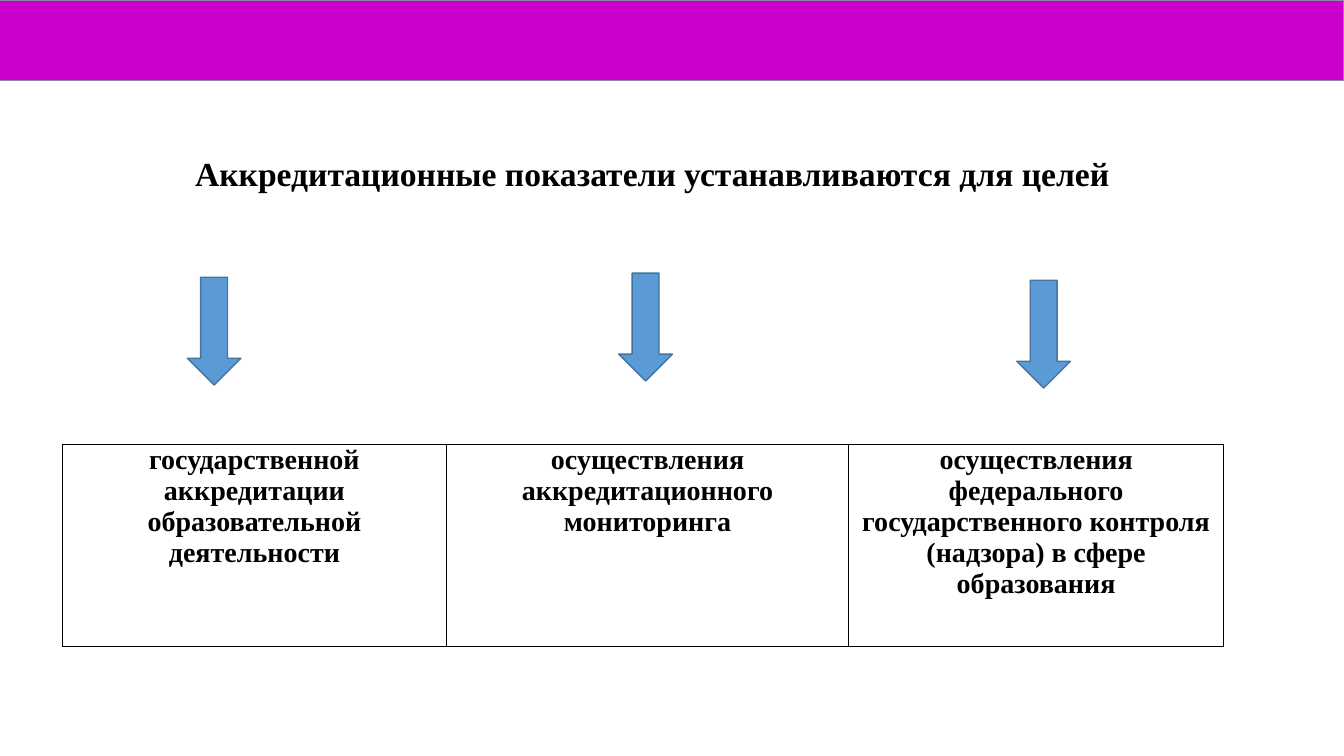
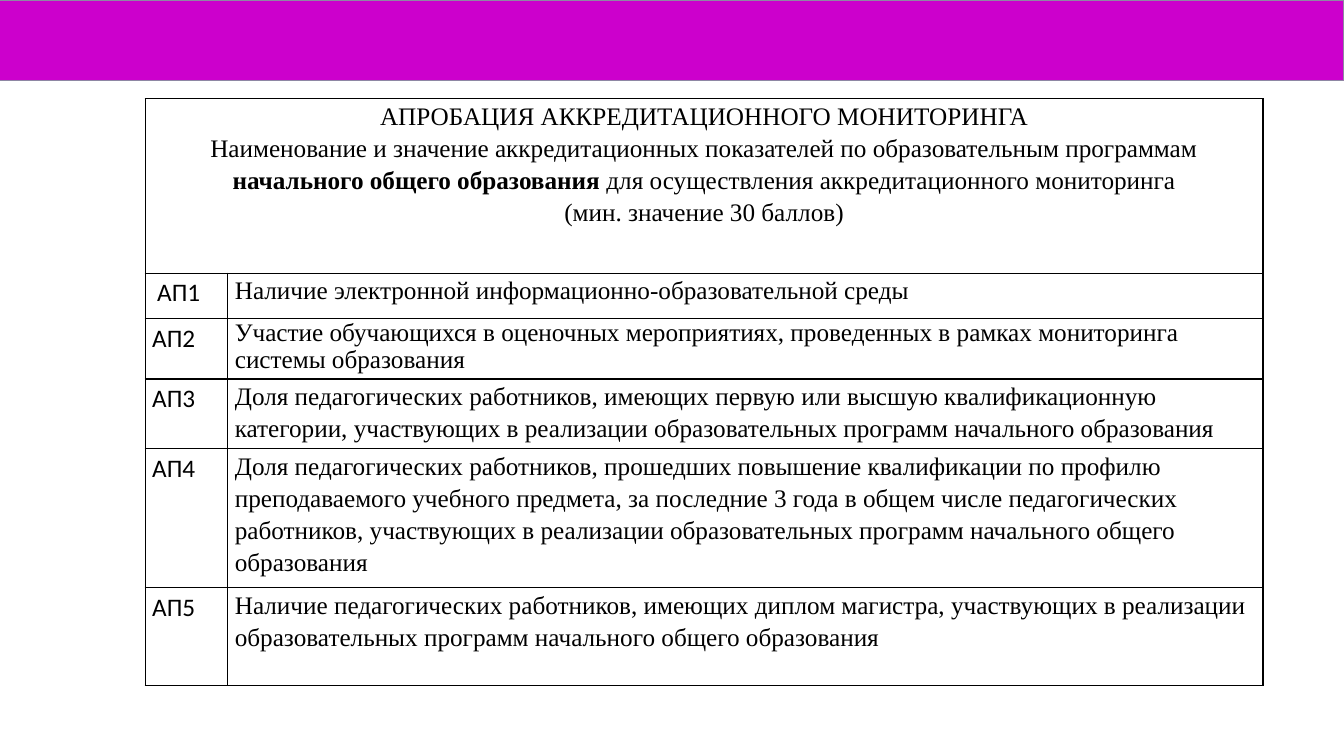
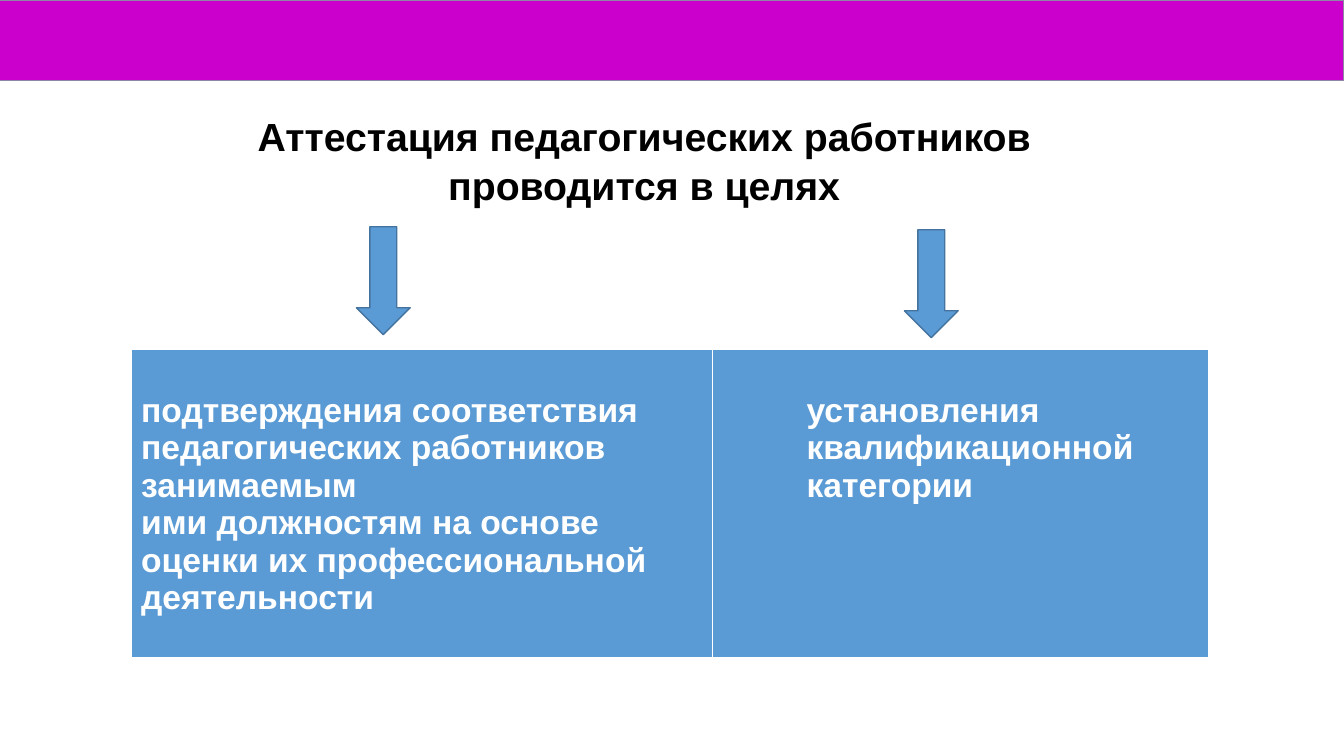
from pptx import Presentation
from pptx.dml.color import RGBColor as Rgb
from pptx.enum.shapes import MSO_SHAPE as Geo
from pptx.enum.text import PP_ALIGN as Al
from pptx.oxml import parse_xml
from pptx.oxml.ns import nsdecls
from pptx.util import Inches, Pt

# Shared look
WIDE, HIGH = Inches(13.33), Inches(7.5)
BAND, EDGE = "CC00CC", "8E87A3"
BLUE, RIM = "5B9BD5", "43739E"
BLACK, WHITE = "000000", "FFFFFF"
SERIF, SANS, BODY = "Times New Roman", "Arial", "Calibri"


def hue(code):
    return Rgb.from_string(code)


def area(left, top, width, height):
    """Turn percent shares of the slide into a box."""
    return (int(WIDE * left / 100), int(HIGH * top / 100),
            int(WIDE * width / 100), int(HIGH * height / 100))


def paint(shape, fill, line, thick):
    shape.shadow.inherit = False
    shape.fill.solid()
    shape.fill.fore_color.rgb = hue(fill)
    shape.line.color.rgb = hue(line)
    shape.line.width = Pt(thick)


def write(frame, paras, size, face, color=BLACK, bold=False,
          align=Al.LEFT, space=1, indent=0):
    """Each paragraph is a list of (text, strong) runs or one string."""
    frame.word_wrap = True
    for i, runs in enumerate(paras):
        para = frame.paragraphs[0] if i == 0 else frame.add_paragraph()
        para.alignment, para.line_spacing = align, space
        if indent:
            para._p.get_or_add_pPr().set("marL", str(Inches(indent)))
        for text, strong in [(runs, bold)] if isinstance(runs, str) else runs:
            run = para.add_run()
            run.text = text
            font = run.font
            font.size, font.name, font.bold = Pt(size), face, strong
            font.color.rgb = hue(color)


def start(deck):
    """Blank slide with the top band."""
    slide = deck.slides.add_slide(deck.slide_layouts[6])
    band = slide.shapes.add_shape(Geo.RECTANGLE, *area(0, 0, 100, 10.67))
    paint(band, BAND, EDGE, 0.75)
    return slide


def title(slide, box, lines, size, face, drop, space=1):
    frame = slide.shapes.add_textbox(*box).text_frame
    frame.margin_top = int(HIGH * drop / 100)
    write(frame, lines, size, face, bold=True, align=Al.CENTER, space=space)


def arrows(slide, box, spots):
    """Spots: centre as a share of the box width, rise above its top."""
    left, top, width, _ = box
    wide, high = area(0, 0, 4, 14.27)[2:]
    for mid, rise in spots:
        arrow = slide.shapes.add_shape(
            Geo.DOWN_ARROW, int(left + width * mid / 100 - wide / 2),
            int(top - HIGH * rise / 100), wide, high)
        paint(arrow, BLUE, RIM, 1)


def border(cell, color):
    props = cell._tc.get_or_add_tcPr()
    for i, side in enumerate("LRTB"):
        props.insert(i, parse_xml(
            f'<a:ln{side} {nsdecls("a")} w="12700"><a:solidFill>'
            f'<a:srgbClr val="{color}"/></a:solidFill></a:ln{side}>'))


def grid(slide, box, cols, rows, line, fill=None):
    """Table filling the box; cols and rows are weights."""
    table = slide.shapes.add_table(len(rows), len(cols), *box).table
    table.first_row = table.horz_banding = False
    for parts, shares, name, total in ((table.columns, cols, "width", box[2]),
                                       (table.rows, rows, "height", box[3])):
        for part, share in zip(parts, shares):
            setattr(part, name, int(total * share / sum(shares)))
    for cell in table.iter_cells():
        border(cell, line)
        if fill:
            cell.fill.solid()
            cell.fill.fore_color.rgb = hue(fill)
        else:
            cell.fill.background()
            cell.margin_left = cell.margin_right = Inches(0.07)
            cell.margin_top = cell.margin_bottom = 0
    return table


def goals(deck):
    slide = start(deck)
    title(slide, area(3.38, 13.87, 90.3, 53.87),
          ["Аккредитационные показатели устанавливаются для целей"],
          24, SERIF, 6.4)
    box = area(4.65, 58.8, 86.4, 26.67)
    arrows(slide, box, [(13.06, 22.13), (50.22, 22.67), (84.5, 21.73)])
    table = grid(slide, box, [3.81, 3.99, 3.72], [1], BLACK)
    texts = [
        ["государственной аккредитации",
         "образовательной деятельности"],
        ["осуществления аккредитационного мониторинга"],
        ["осуществления федерального государственного контроля "
         "(надзора) в сфере образования"],
    ]
    for cell, paras in zip(table.iter_cells(), texts):
        write(cell.text_frame, paras, 20, SERIF, bold=True, align=Al.CENTER)


def scores(deck):
    slide = start(deck)
    table = grid(slide, area(10.8, 13.07, 83.18, 77.6), [0.82, 10.27],
                 [1.73, 0.45, 0.6, 0.69, 1.38, 0.97], BLACK)
    # Heading across both columns
    head = table.cell(0, 0)
    head.merge(table.cell(0, 1))
    write(head.text_frame, [
        "АПРОБАЦИЯ АККРЕДИТАЦИОННОГО МОНИТОРИНГА",
        [("Наименование и значение аккредитационных показателей по "
          "образовательным программам ", False),
         ("начального общего образования", True),
         (" для осуществления аккредитационного мониторинга", False)],
        "(мин. значение 30 баллов)",
    ], 18, SERIF, align=Al.CENTER, space=1.15)
    # Numbered measures
    texts = [
        "Наличие электронной информационно-образовательной среды",
        "Участие обучающихся в оценочных мероприятиях, проведенных в рамках "
        "мониторинга системы образования",
        "Доля педагогических работников, имеющих первую или высшую "
        "квалификационную категории, участвующих в реализации "
        "образовательных программ начального образования",
        "Доля педагогических работников, прошедших повышение квалификации по "
        "профилю преподаваемого учебного предмета, за последние 3 года в "
        "общем числе педагогических работников, участвующих в реализации "
        "образовательных программ начального общего образования",
        "Наличие педагогических работников, имеющих диплом магистра, "
        "участвующих в реализации образовательных программ начального "
        "общего образования",
    ]
    for i, text in enumerate(texts, 1):
        write(table.cell(i, 0).text_frame, [f"АП{i}"], 18, BODY,
              space=1.15, indent=0.05 if i == 1 else 0)
        write(table.cell(i, 1).text_frame, [text], 18, SERIF,
              space=1 if i == 2 else 1.15)


def review(deck):
    slide = start(deck)
    title(slide, area(2.78, 13.87, 90.3, 56.93),
          ["Аттестация педагогических работников", "проводится в целях"],
          28, SANS, 0.67, 1.05)
    box = area(9.75, 46.27, 80.2, 40.67)
    arrows(slide, box, [(23.41, 16.27), (74.25, 15.87)])
    table = grid(slide, box, [5.77, 4.92], [1], WHITE, BLUE)
    texts = [
        (["подтверждения соответствия",
          "педагогических работников занимаемым",
          "ими должностям на основе оценки их профессиональной "
          "деятельности"], 0),
        (["установления", "квалификационной", "категории"], 0.83),
    ]
    for cell, (paras, indent) in zip(table.iter_cells(), texts):
        cell.margin_top = Inches(0.42)
        write(cell.text_frame, paras, 24, SANS, WHITE, True, indent=indent)


def main():
    deck = Presentation()
    deck.slide_width, deck.slide_height = WIDE, HIGH
    for build in (goals, scores, review):
        build(deck)
    deck.save("out.pptx")


if __name__ == "__main__":
    main()
